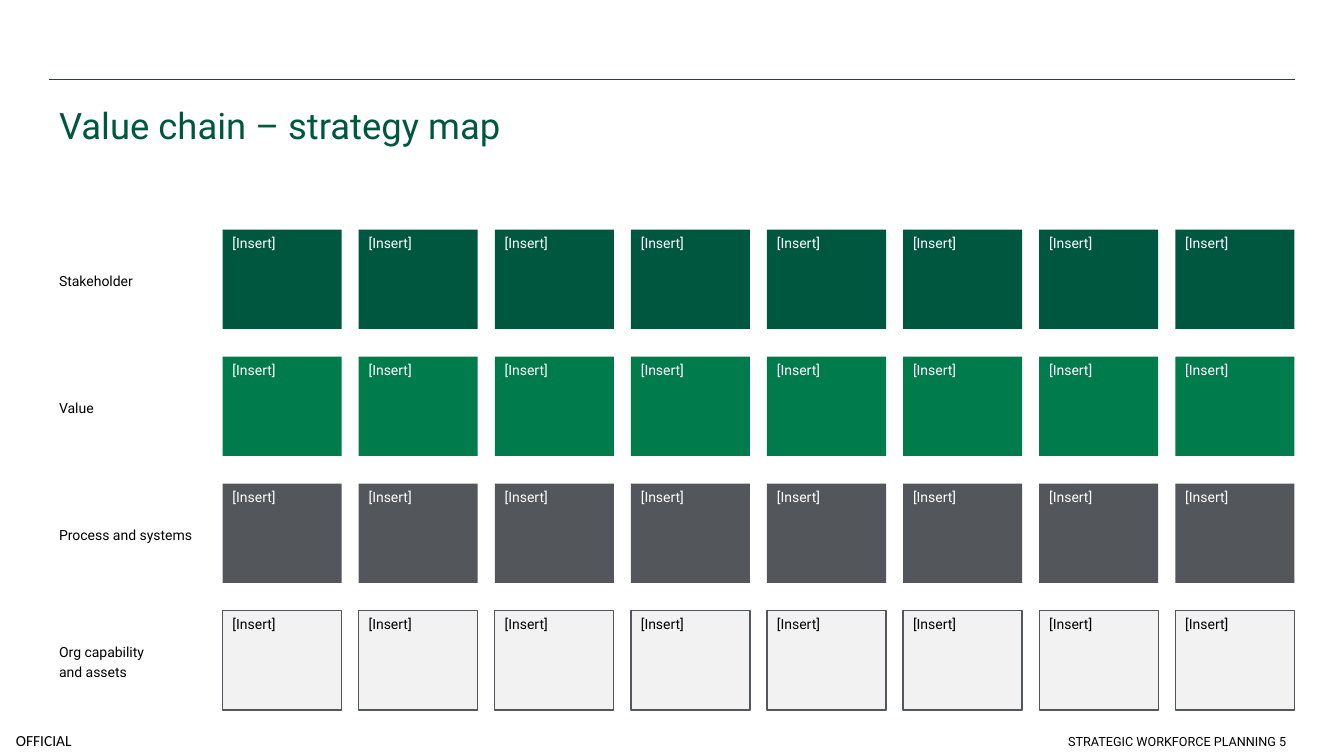
from dataclasses import dataclass

from lxml.etree import SubElement
from pptx import Presentation
from pptx.dml.color import RGBColor
from pptx.enum.shapes import MSO_CONNECTOR, MSO_SHAPE
from pptx.enum.text import MSO_ANCHOR, PP_ALIGN
from pptx.oxml.ns import qn
from pptx.util import Cm, Pt


@dataclass(frozen=True)
class Theme:
    dark_green: RGBColor = RGBColor(0x00, 0x57, 0x3F)
    green: RGBColor = RGBColor(0x00, 0x7B, 0x4B)
    grey: RGBColor = RGBColor(0x53, 0x56, 0x5A)
    light_grey: RGBColor = RGBColor(0xF2, 0xF2, 0xF2)
    white: RGBColor = RGBColor(0xFF, 0xFF, 0xFF)
    black: RGBColor = RGBColor(0x00, 0x00, 0x00)
    font: str = "Roboto"
    marking_font: str = "Calibri"
    title_size: Pt = Pt(26)
    marking_size: Pt = Pt(11)
    body_size: Pt = Pt(10)
    footer_size: Pt = Pt(9)
    line_width: Pt = Pt(1)


theme = Theme()


def write_text(shape, text, size=theme.body_size, color=theme.black, font=theme.font,
               anchor=MSO_ANCHOR.TOP, align=PP_ALIGN.LEFT, line_spacing=1.0):
    """Fill a shape with text, one paragraph per line."""
    frame = shape.text_frame
    frame.word_wrap = True
    frame.vertical_anchor = anchor
    frame.text = text
    for paragraph in frame.paragraphs:
        paragraph.alignment = align
        paragraph.line_spacing = line_spacing
        paragraph.font.size = size
        paragraph.font.name = font
        paragraph.font.color.rgb = color


presentation = Presentation()
presentation.slide_width = Cm(33.87)
presentation.slide_height = Cm(19.05)
slide = presentation.slides.add_slide(presentation.slide_layouts[6])
shapes = slide.shapes

left_margin, content_width = Cm(1.24), Cm(31.4)

rule = shapes.add_connector(MSO_CONNECTOR.STRAIGHT, left_margin, Cm(2),
                            left_margin + content_width, Cm(2))
rule.line.color.rgb = theme.dark_green
rule.line.width = theme.line_width
SubElement(rule.element.spPr, qn("a:effectLst"))

marking = shapes.add_textbox(0, Cm(18.26), Cm(2.21), Cm(0.79))
write_text(marking, "OFFICIAL", size=theme.marking_size, font=theme.marking_font,
           anchor=MSO_ANCHOR.MIDDLE, align=PP_ALIGN.CENTER)
frame = marking.text_frame
frame.margin_left = frame.margin_right = frame.margin_top = frame.margin_bottom = 0

title = shapes.add_textbox(left_margin, Cm(2.26), content_width, Cm(2.59))
write_text(title, "Value chain – strategy map", size=theme.title_size,
           color=theme.dark_green, line_spacing=1.2)

# Row label, box fill, box outline, box text colour
rows = [
    ("Stakeholder", theme.dark_green, None, theme.white),
    ("Value", theme.green, None, theme.white),
    ("Process and systems", theme.grey, None, theme.white),
    ("Org capability\nand assets", theme.light_grey, theme.grey, theme.black),
]
column_count = 8
grid_left, grid_top = Cm(5.61), Cm(5.79)
column_pitch, row_pitch = Cm(3.43), Cm(3.2)
box_width, box_height = Cm(3), Cm(2.5)
label_width, label_height = Cm(4), Cm(1)

for row, (label_text, fill, outline, text_color) in enumerate(rows):
    top = grid_top + row * row_pitch
    label = shapes.add_textbox(left_margin, top + (box_height - label_height) // 2,
                               label_width, label_height)
    write_text(label, label_text, anchor=MSO_ANCHOR.MIDDLE, line_spacing=1.2)

    for column in range(column_count):
        box = shapes.add_shape(MSO_SHAPE.RECTANGLE, grid_left + column * column_pitch,
                               top, box_width, box_height)
        box.shadow.inherit = False
        box.fill.solid()
        box.fill.fore_color.rgb = fill
        if outline is None:
            box.line.fill.background()
        else:
            box.line.color.rgb = outline
            box.line.width = theme.line_width
        write_text(box, "[Insert]", color=text_color)

footer = shapes.add_textbox(Cm(17.37), Cm(18.01), Cm(15.29), Cm(1))
write_text(footer, "STRATEGIC WORKFORCE PLANNING 5", size=theme.footer_size,
           anchor=MSO_ANCHOR.BOTTOM, align=PP_ALIGN.RIGHT)

presentation.save("out.pptx")
